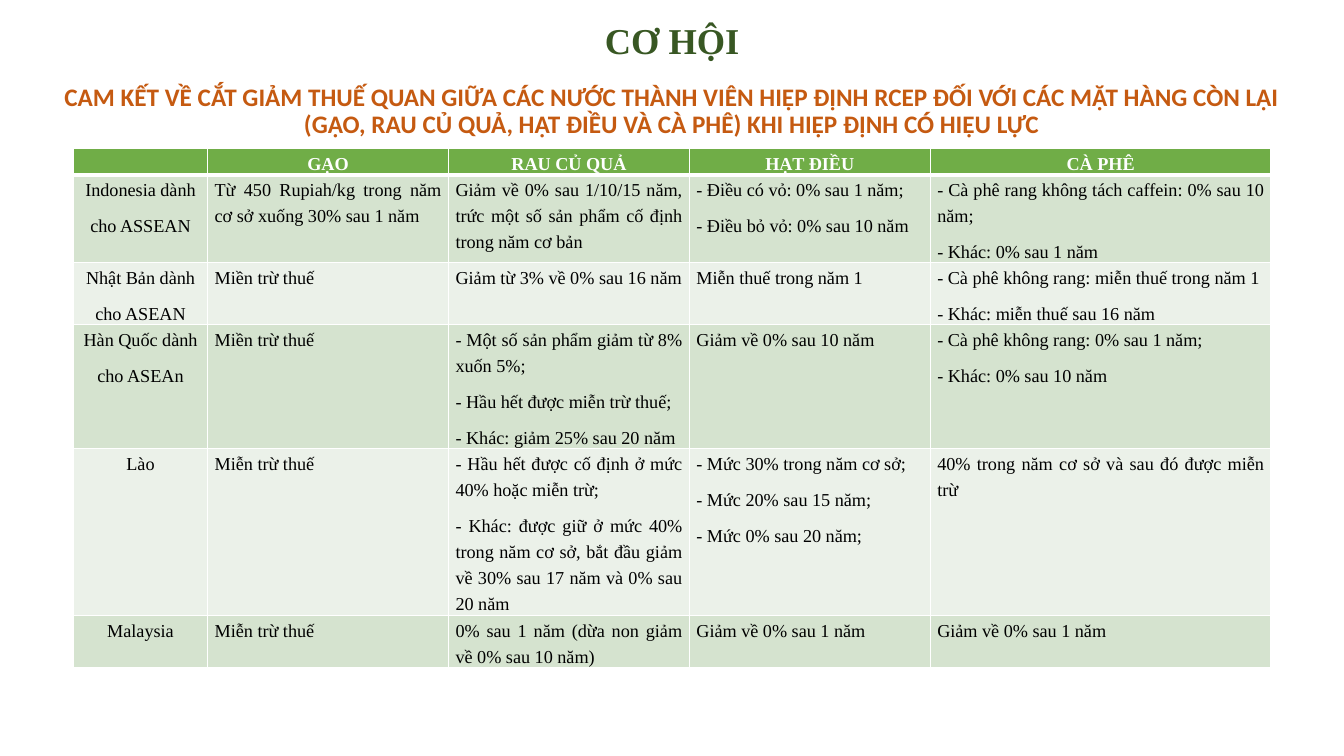
import pptx
import pptx.util
from lxml import etree
from pptx.dml.color import RGBColor
from pptx.enum.text import MSO_ANCHOR, MSO_AUTO_SIZE, PP_ALIGN
from pptx.oxml.ns import qn
from pptx.util import Cm, Pt

TITLE = "CƠ HỘI"
SUBTITLE = (
    "CAM KẾT VỀ CẮT GIẢM THUẾ QUAN GIỮA CÁC NƯỚC THÀNH VIÊN HIỆP ĐỊNH RCEP "
    "ĐỐI VỚI CÁC MẶT HÀNG CÒN LẠI (GẠO, RAU CỦ QUẢ, HẠT ĐIỀU VÀ CÀ PHÊ) "
    "KHI HIỆP ĐỊNH CÓ HIỆU LỰC"
)
TARIFFS = [
    ["", "GẠO", "RAU CỦ QUẢ", "HẠT ĐIỀU", "CÀ PHÊ"],
    [
        "Indonesia dành\ncho ASSEAN",
        "Từ 450 Rupiah/kg trong năm cơ sở xuống 30% sau 1 năm",
        "Giảm về 0% sau 1/10/15 năm, trức một số sản phẩm cố định trong năm cơ bản",
        "- Điều có vỏ: 0% sau 1 năm;\n- Điều bỏ vỏ: 0% sau 10 năm",
        "- Cà phê rang không tách caffein: 0% sau 10 năm;\n- Khác: 0% sau 1 năm",
    ],
    [
        "Nhật Bản dành\ncho ASEAN",
        "Miền trừ thuế",
        "Giảm từ 3% về 0% sau 16 năm",
        "Miễn thuế trong năm 1",
        "- Cà phê không rang: miễn thuế trong năm 1\n- Khác: miễn thuế sau 16 năm",
    ],
    [
        "Hàn Quốc dành\ncho ASEAn",
        "Miền trừ thuế",
        "- Một số sản phẩm giảm từ 8% xuốn 5%;\n- Hầu hết được miễn trừ thuế;\n"
        "- Khác: giảm 25% sau 20 năm",
        "Giảm về 0% sau 10 năm",
        "- Cà phê không rang: 0% sau 1 năm;\n- Khác: 0% sau 10 năm",
    ],
    [
        "Lào",
        "Miễn trừ thuế",
        "- Hầu hết được cố định ở mức 40% hoặc miễn trừ;\n"
        "- Khác: được giữ ở mức 40% trong năm cơ sở, bắt đầu giảm về 30% "
        "sau 17 năm và 0% sau 20 năm",
        "- Mức 30% trong năm cơ sở;\n- Mức 20% sau 15 năm;\n- Mức 0% sau 20 năm;",
        "40% trong năm cơ sở và sau đó được miễn trừ",
    ],
    [
        "Malaysia",
        "Miễn trừ thuế",
        "0% sau 1 năm (dừa non giảm về 0% sau 10 năm)",
        "Giảm về 0% sau 1 năm",
        "Giảm về 0% sau 1 năm",
    ],
]
COLUMN_WIDTHS = [3.38, 6.07, 6.07, 6.07, 8.59]
ROW_HEIGHTS = [0.65, 2.21, 1.56, 3.12, 4.21, 1.31]

WHITE = RGBColor(0xFF, 0xFF, 0xFF)
BLACK = RGBColor(0, 0, 0)
DARK_GREEN = RGBColor(0x38, 0x57, 0x23)
ORANGE = RGBColor(0xC5, 0x5A, 0x11)
HEADER_GREEN = RGBColor(0x70, 0xAD, 0x47)
BAND_COLORS = [RGBColor(0xEB, 0xF1, 0xE9), RGBColor(0xD5, 0xE3, 0xCF)]
SERIF = "Times New Roman"


def format_font(font, name, size, color, bold):
    font.name = name
    font.size = Pt(size)
    font.color.rgb = color
    font.bold = bold


def fill_heading(shape, text, name, size, color):
    frame = shape.text_frame
    frame.text = text
    frame.word_wrap = True
    frame.auto_size = MSO_AUTO_SIZE.NONE
    frame.vertical_anchor = MSO_ANCHOR.MIDDLE
    paragraph = frame.paragraphs[0]
    paragraph.alignment = PP_ALIGN.CENTER
    paragraph.line_spacing = 0.9
    format_font(paragraph.runs[0].font, name, size, color, True)


def add_borders(cell, bottom_width):
    properties = cell._tc.get_or_add_tcPr()
    widths = [("a:lnL", 1), ("a:lnR", 1), ("a:lnT", 1), ("a:lnB", bottom_width)]
    for position, (tag, width) in enumerate(widths):
        line = etree.Element(qn(tag), w=str(Pt(width)))
        fill = etree.SubElement(line, qn("a:solidFill"))
        etree.SubElement(fill, qn("a:srgbClr"), val=str(WHITE))
        properties.insert(position, line)


def fill_cell(cell, text, row, column):
    header = row == 0
    cell.margin_left = cell.margin_right = Cm(0.18)
    cell.margin_top = cell.margin_bottom = 0
    cell.vertical_anchor = MSO_ANCHOR.MIDDLE if header else MSO_ANCHOR.TOP
    cell.fill.solid()
    cell.fill.fore_color.rgb = HEADER_GREEN if header else BAND_COLORS[row % 2]
    add_borders(cell, 3 if header else 1)
    cell.text_frame.text = text
    for paragraph in cell.text_frame.paragraphs:
        centered = header or column == 0
        paragraph.alignment = PP_ALIGN.CENTER if centered else PP_ALIGN.JUSTIFY
        paragraph.line_spacing = 1.3
        paragraph.space_after = Pt(7)
        paragraph.font.size = Pt(13)
        for run in paragraph.runs:
            format_font(run.font, SERIF, 13, WHITE if header else BLACK, header)
        if not text:
            etree.SubElement(paragraph._p, qn("a:endParaRPr"), sz="1300")


def main():
    presentation = pptx.Presentation()
    presentation.slide_width = Cm(33.87)
    presentation.slide_height = Cm(19.05)
    slide = presentation.slides.add_slide(presentation.slide_layouts[5])

    title = slide.shapes.title
    title.left, title.top, title.width, title.height = Cm(2.46), Cm(0.36), Cm(28.96), Cm(1.42)
    fill_heading(title, TITLE, SERIF, 26, DARK_GREEN)

    subtitle = slide.shapes.add_textbox(Cm(1.32), Cm(2), Cm(31.22), Cm(1.65))
    fill_heading(subtitle, SUBTITLE, "Calibri", 18, ORANGE)

    table = slide.shapes.add_table(
        len(ROW_HEIGHTS), len(COLUMN_WIDTHS), Cm(1.85), Cm(3.75),
        Cm(sum(COLUMN_WIDTHS)), Cm(sum(ROW_HEIGHTS)),
    ).table
    for column, width in zip(table.columns, COLUMN_WIDTHS):
        column.width = Cm(width)
    for row, height in zip(table.rows, ROW_HEIGHTS):
        row.height = Cm(height)
    for row, texts in enumerate(TARIFFS):
        for column, text in enumerate(texts):
            fill_cell(table.cell(row, column), text, row, column)

    presentation.save("out.pptx")


if __name__ == "__main__":
    main()
